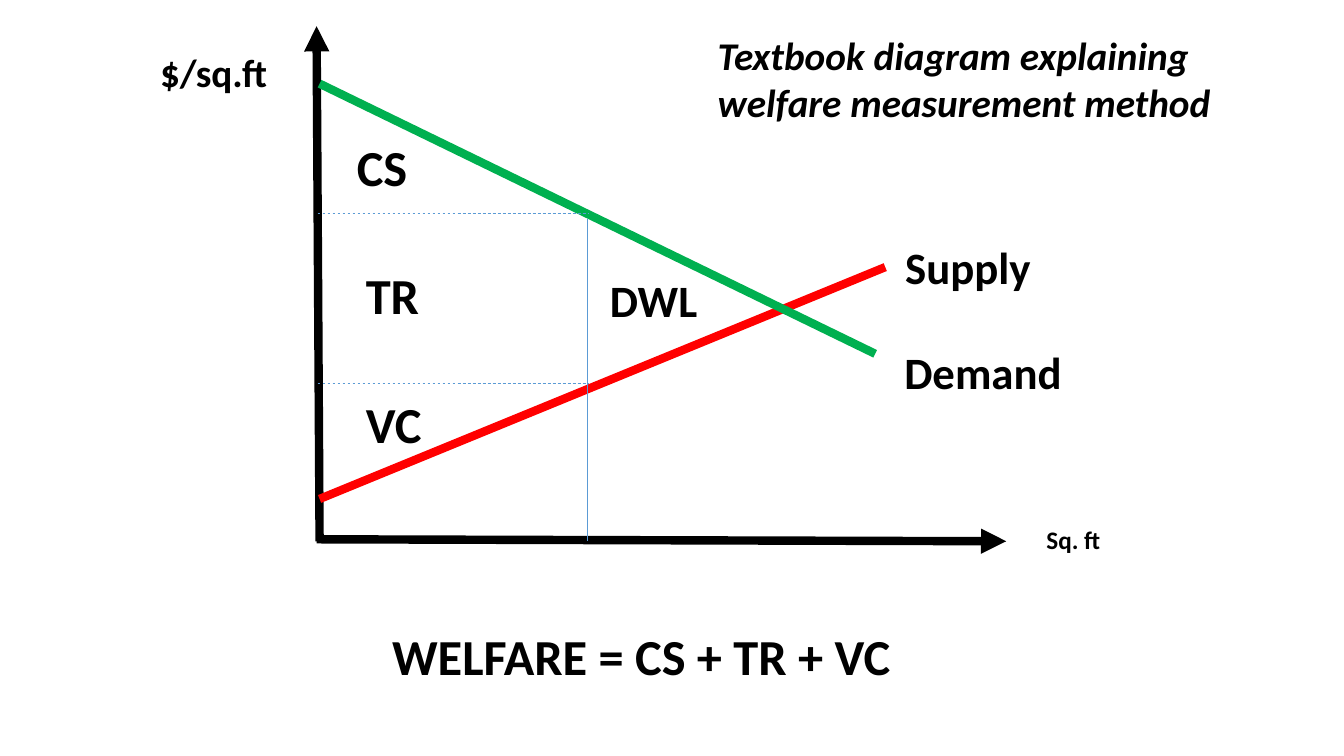
from lxml.etree import SubElement
from pptx import Presentation
from pptx.dml.color import RGBColor
from pptx.enum.dml import MSO_LINE
from pptx.enum.shapes import MSO_CONNECTOR
from pptx.enum.text import MSO_AUTO_SIZE
from pptx.oxml.ns import qn
from pptx.util import Emu, Pt

EMU_PER_PX = 9144
BLACK, RED, GREEN, BLUE = "000000", "FF0000", "00B050", "5B9BD5"


def px(length):
    return Emu(length * EMU_PER_PX)


def color(hex_value):
    return RGBColor.from_string(hex_value)


def add_line(slide, start, end, stroke, weight=6, dashed=False, arrow=False):
    line = slide.shapes.add_connector(
        MSO_CONNECTOR.STRAIGHT, *map(px, start + end))
    line.line.color.rgb = color(stroke)
    line.line.width = Pt(weight)
    if dashed:
        line.line.dash_style = MSO_LINE.DASH
    properties = line.element.spPr
    if arrow:
        SubElement(properties.find(qn("a:ln")), qn("a:tailEnd"), type="triangle")
    SubElement(properties, qn("a:effectLst"))


def add_text(slide, text, left, top, width, height, size=36, italic=False, wrap=False):
    label = slide.shapes.add_textbox(*map(px, (left, top, width, height)))
    frame = label.text_frame
    frame.word_wrap = wrap
    frame.auto_size = MSO_AUTO_SIZE.SHAPE_TO_FIT_TEXT
    frame.text = text
    for paragraph in frame.paragraphs:
        for run in paragraph.runs:
            run.font.name = "Calibri"
            run.font.size = Pt(size)
            run.font.bold = True
            run.font.italic = italic
            run.font.color.rgb = color(BLACK)


def add_axes(slide):
    add_line(slide, (314, 535), (998, 537), BLACK, arrow=True)
    add_line(slide, (317, 537), (314, 26), BLACK, arrow=True)
    add_text(slide, "$/sq.ft", 149, 43, 128, 57, size=28)
    add_text(slide, "Sq. ft", 1028, 515, 75, 40, size=18)


def add_curves(slide):
    add_line(slide, (317, 495), (878, 265), RED)
    add_line(slide, (317, 83), (868, 351), GREEN)
    add_text(slide, "Demand", 887, 337, 178, 64, size=32)
    add_text(slide, "Supply", 888, 233, 146, 64, size=32)


def add_welfare_areas(slide):
    axis_x, quantity_x = 315, 583
    for price_y in (212, 380):
        add_line(slide, (axis_x, price_y), (quantity_x, price_y), BLUE,
                 weight=0.5, dashed=True)
    add_line(slide, (quantity_x, 217), (quantity_x, 537), BLUE, weight=0.5)
    add_text(slide, "CS", 344, 130, 71, 71)
    add_text(slide, "TR", 353, 257, 74, 71)
    add_text(slide, "VC", 353, 385, 76, 71)
    add_text(slide, "DWL", 595, 266, 108, 64, size=32)


def main():
    presentation = Presentation()
    presentation.slide_width = px(1333)
    presentation.slide_height = px(750)
    slide = presentation.slides.add_slide(presentation.slide_layouts[6])
    add_axes(slide)
    add_curves(slide)
    add_welfare_areas(slide)
    add_text(slide, "WELFARE = CS + TR + VC", 379, 615, 519, 71)
    add_text(slide, "Textbook diagram explaining\nwelfare measurement method",
             702, 26, 557, 104, size=28, italic=True, wrap=True)
    presentation.save("out.pptx")


if __name__ == "__main__":
    main()
